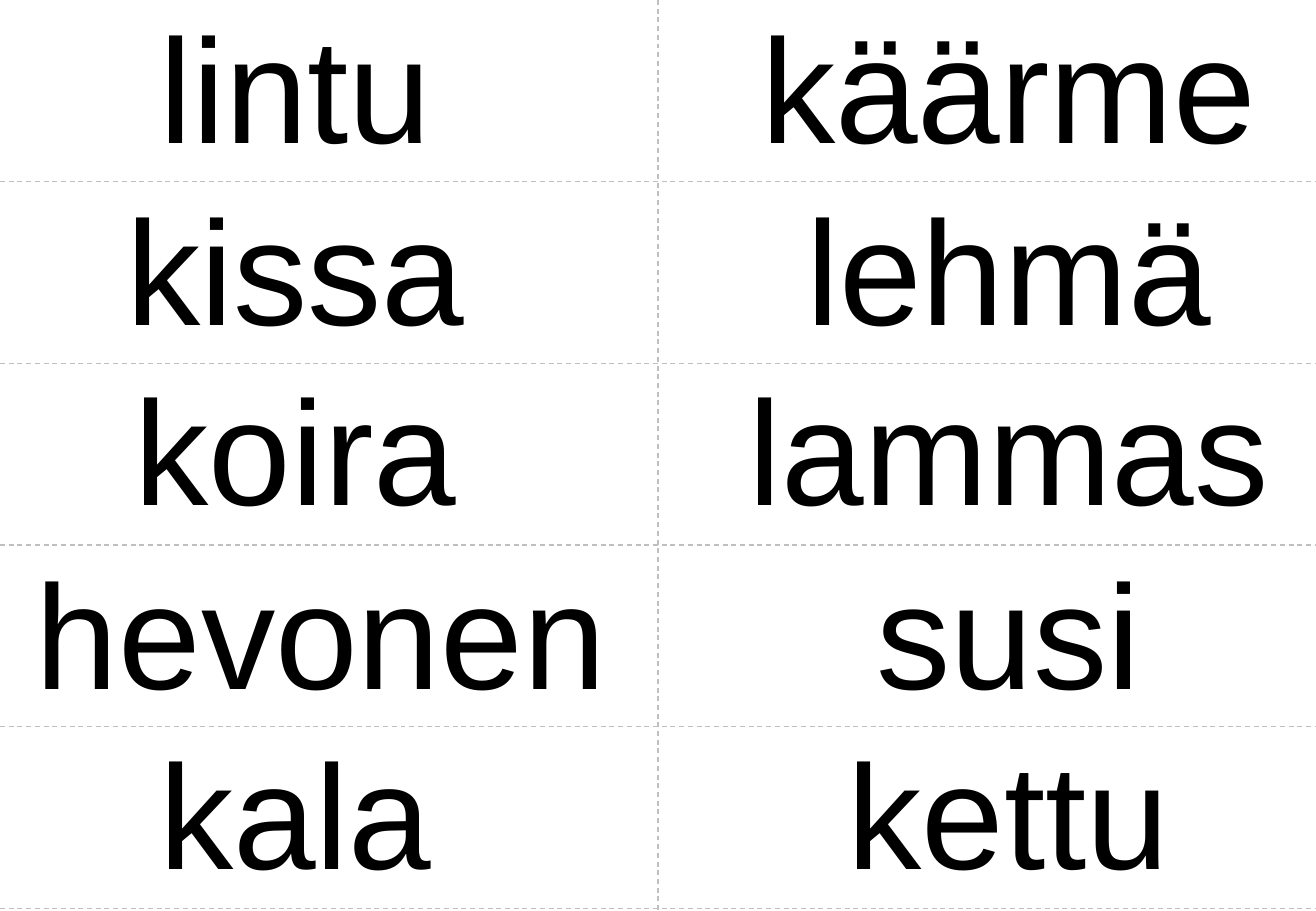
from dataclasses import dataclass

from lxml import etree
from pptx import Presentation
from pptx.dml.color import RGBColor
from pptx.enum.dml import MSO_LINE
from pptx.enum.text import MSO_AUTO_SIZE, PP_ALIGN
from pptx.oxml.ns import qn
from pptx.slide import Slide
from pptx.util import Inches, Pt

DASH = MSO_LINE.DASH
CENTER = PP_ALIGN.CENTER
GROW = MSO_AUTO_SIZE.SHAPE_TO_FIT_TEXT

PAGE_WIDTH, PAGE_HEIGHT = 10.83, 7.5
ROWS = 5
ROW_HEIGHT = 7.48 / ROWS
WORD_HEIGHT = 1.48
ROW_LIFTS = (0.09, 0.09, 0.1, 0.08, 0.1)
LEFT_CENTER, RIGHT_CENTER = 2.43, 8.3
INSET = 0.05
INK, CUT_GREY = "000000", "BFBFBF"


@dataclass(frozen=True)
class WordCard:
    word: str
    row: int
    width: float
    center: float


CARDS = (
    WordCard("lintu", 0, 2.36, LEFT_CENTER),
    WordCard("kissa", 1, 2.9, LEFT_CENTER),
    WordCard("koira", 2, 2.76, LEFT_CENTER),
    WordCard("hevonen", 3, 4.8, 2.64),
    WordCard("kala", 4, 2.36, LEFT_CENTER),
    WordCard("käärme", 0, 4.19, RIGHT_CENTER),
    WordCard("lehmä", 1, 3.44, RIGHT_CENTER),
    WordCard("lammas", 2, 4.39, RIGHT_CENTER),
    WordCard("susi", 3, 2.29, RIGHT_CENTER),
    WordCard("kettu", 4, 2.76, RIGHT_CENTER),
)


@dataclass(frozen=True)
class CutLine:
    x1: float
    y1: float
    x2: float
    y2: float


CUT_LINES = (
    CutLine(PAGE_WIDTH / 2, 0, PAGE_WIDTH / 2, PAGE_HEIGHT),
    *(
        CutLine(0, row * ROW_HEIGHT, PAGE_WIDTH, row * ROW_HEIGHT)
        for row in range(1, ROWS + 1)
    ),
)


def color(value: str) -> RGBColor:
    return RGBColor.from_string(value)


def draw_card(slide: Slide, card: WordCard) -> None:
    label = slide.shapes.add_textbox(
        Inches(card.center - card.width / 2),
        Inches(card.row * ROW_HEIGHT - ROW_LIFTS[card.row]),
        Inches(card.width),
        Inches(WORD_HEIGHT),
    )
    frame = label.text_frame
    frame.text = card.word
    frame.word_wrap = False
    frame.auto_size = GROW
    frame.margin_left = frame.margin_right = Inches(INSET)
    frame.margin_top = frame.margin_bottom = Inches(INSET)
    paragraph = frame.paragraphs[0]
    paragraph.alignment = CENTER
    font = paragraph.runs[0].font
    font.name = "Arial"
    font.size = Pt(88)
    font.color.rgb = color(INK)


def draw_cut_line(slide: Slide, cut: CutLine) -> None:
    connector = slide.shapes.add_connector(
        1, Inches(cut.x1), Inches(cut.y1), Inches(cut.x2), Inches(cut.y2)
    )
    connector.line.color.rgb = color(CUT_GREY)
    connector.line.width = Pt(0.75)
    connector.line.dash_style = DASH
    etree.SubElement(connector._element.spPr, qn("a:effectLst"))


def main() -> None:
    deck = Presentation()
    deck.slide_width = Inches(PAGE_WIDTH)
    deck.slide_height = Inches(PAGE_HEIGHT)
    slide = deck.slides.add_slide(deck.slide_layouts.get_by_name("Blank"))
    for card in CARDS:
        draw_card(slide, card)
    for cut in CUT_LINES:
        draw_cut_line(slide, cut)
    deck.save("out.pptx")


if __name__ == "__main__":
    main()
